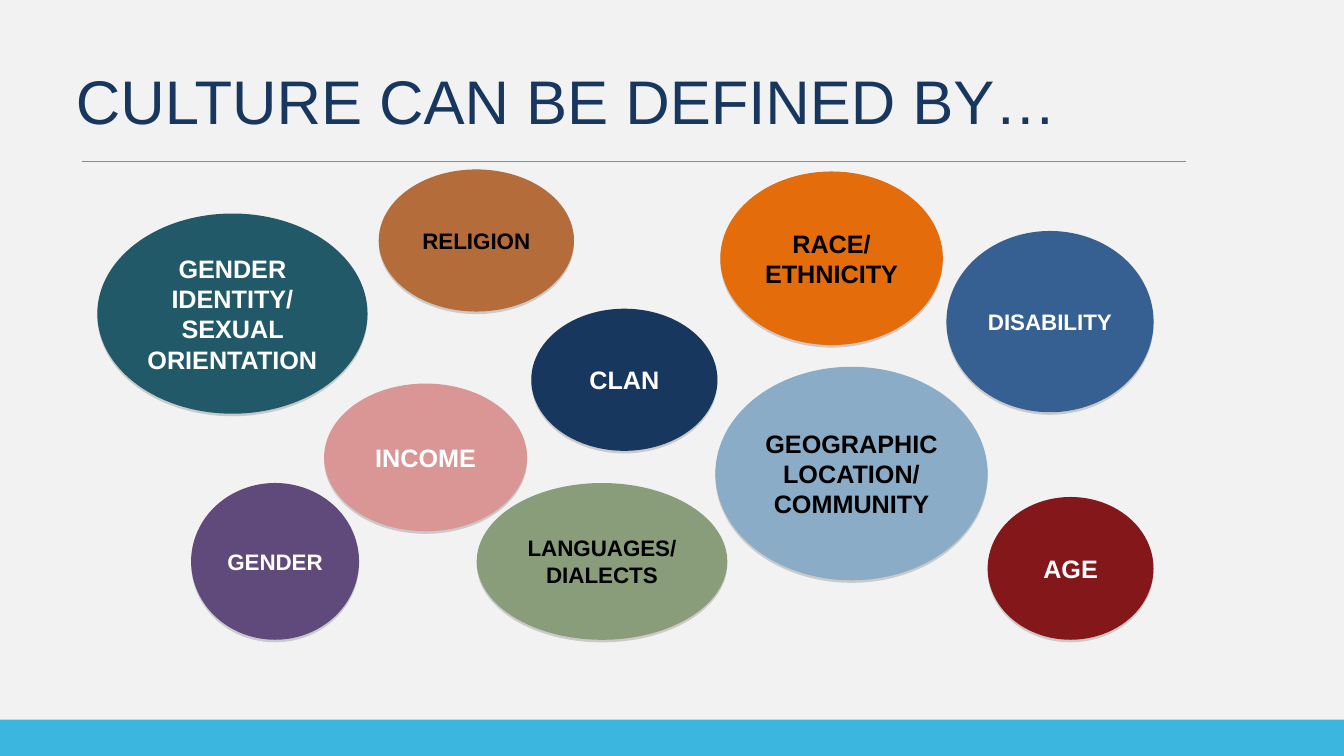
"""Build a slide that shows the traits which define culture as coloured ovals."""
from lxml import etree
from pptx import Presentation
from pptx.dml.color import RGBColor
from pptx.enum.shapes import MSO_CONNECTOR, MSO_SHAPE
from pptx.enum.text import MSO_ANCHOR as Anchor, PP_ALIGN as Align
from pptx.oxml.ns import qn
from pptx.util import Pt

COLORS = {
    "background": "F2F2F2", "bar": "3AB6DF", "rule": "8C8C8C", "shadow": "808080",
    "black": "000000", "white": "FFFFFF", "navy": "17375E", "teal": "215968",
    "brown": "B46C3A", "orange": "E46C0A", "blue": "376092", "sky": "8BACC6",
    "pink": "D99694", "purple": "604A7B", "sage": "8A9D7A", "red": "84171A",
}


def rgb(name):
    return RGBColor.from_string(COLORS[name])


def write_text(shape, text, size, color, bold=False, align=Align.CENTER, inset=4):
    frame = shape.text_frame
    frame.word_wrap = True
    frame.vertical_anchor = Anchor.MIDDLE
    frame.margin_left = frame.margin_right = Pt(inset)
    frame.text = text
    for paragraph in frame.paragraphs:
        paragraph.alignment = align
        paragraph.font.name = "Arial"
        paragraph.font.size = Pt(size)
        paragraph.font.bold = bold
        paragraph.font.color.rgb = rgb(color)


presentation = Presentation()
presentation.slide_width, presentation.slide_height = Pt(960), Pt(540)
slide = presentation.slides.add_slide(presentation.slide_layouts[5])
slide.background.fill.solid()
slide.background.fill.fore_color.rgb = rgb("background")

bar = slide.shapes.add_shape(MSO_SHAPE.RECTANGLE, Pt(0), Pt(514), Pt(960), Pt(26))
bar.shadow.inherit = False
bar.fill.solid()
bar.fill.fore_color.rgb = rgb("bar")
bar.line.fill.background()

rule = slide.shapes.add_connector(MSO_CONNECTOR.STRAIGHT, Pt(58.5), Pt(115), Pt(847), Pt(115))
rule.line.color.rgb = rgb("rule")
rule.line.width = Pt(0.5)
etree.SubElement(rule._element.spPr, qn("a:effectLst"))

title = slide.shapes.title
title.left, title.top, title.width, title.height = Pt(47), Pt(26), Pt(824), Pt(90)
write_text(title, "CULTURE CAN BE DEFINED BY…", 44, "navy", align=Align.LEFT, inset=7.2)

ovals = [
    ("LANGUAGES/ DIALECTS", 340.5, 345, 179, 112, "sage", 16, "black"),
    ("DISABILITY", 676, 165, 148, 129.5, "blue", 16, "white"),
    ("GENDER IDENTITY/ SEXUAL ORIENTATION", 69.5, 152.5, 193, 143, "teal", 18, "white"),
    ("GEOGRAPHIC LOCATION/\nCOMMUNITY", 511, 262, 194.5, 152.5, "sky", 18, "black"),
    ("RELIGION", 270.5, 121, 139.5, 101.5, "brown", 16, "black"),
    ("RACE/\nETHNICITY", 514.5, 122.5, 159, 124, "orange", 18, "black"),
    ("AGE", 705.5, 355, 118.5, 102, "red", 18, "white"),
    ("GENDER", 136.5, 345, 120, 112, "purple", 16, "white"),
    ("INCOME", 231.5, 274, 145, 105.5, "pink", 18, "white"),
    ("CLAN", 379.5, 220.5, 133, 101.5, "navy", 18, "white"),
]
for text, left, top, width, height, fill, size, color in ovals:
    oval = slide.shapes.add_shape(MSO_SHAPE.OVAL, Pt(left), Pt(top), Pt(width), Pt(height))
    oval.fill.solid()
    oval.fill.fore_color.rgb = rgb(fill)
    oval.line.fill.background()
    write_text(oval, text, size, color, bold=True)
    effects = etree.SubElement(oval._element.spPr, qn("a:effectLst"))
    shadow = etree.SubElement(effects, qn("a:outerShdw"), blurRad="0", dist=str(Pt(1.8)),
                              dir="5400000", rotWithShape="0")
    shade = etree.SubElement(shadow, qn("a:srgbClr"), val=COLORS["shadow"])
    etree.SubElement(shade, qn("a:alpha"), val="35000")

presentation.save("out.pptx")
